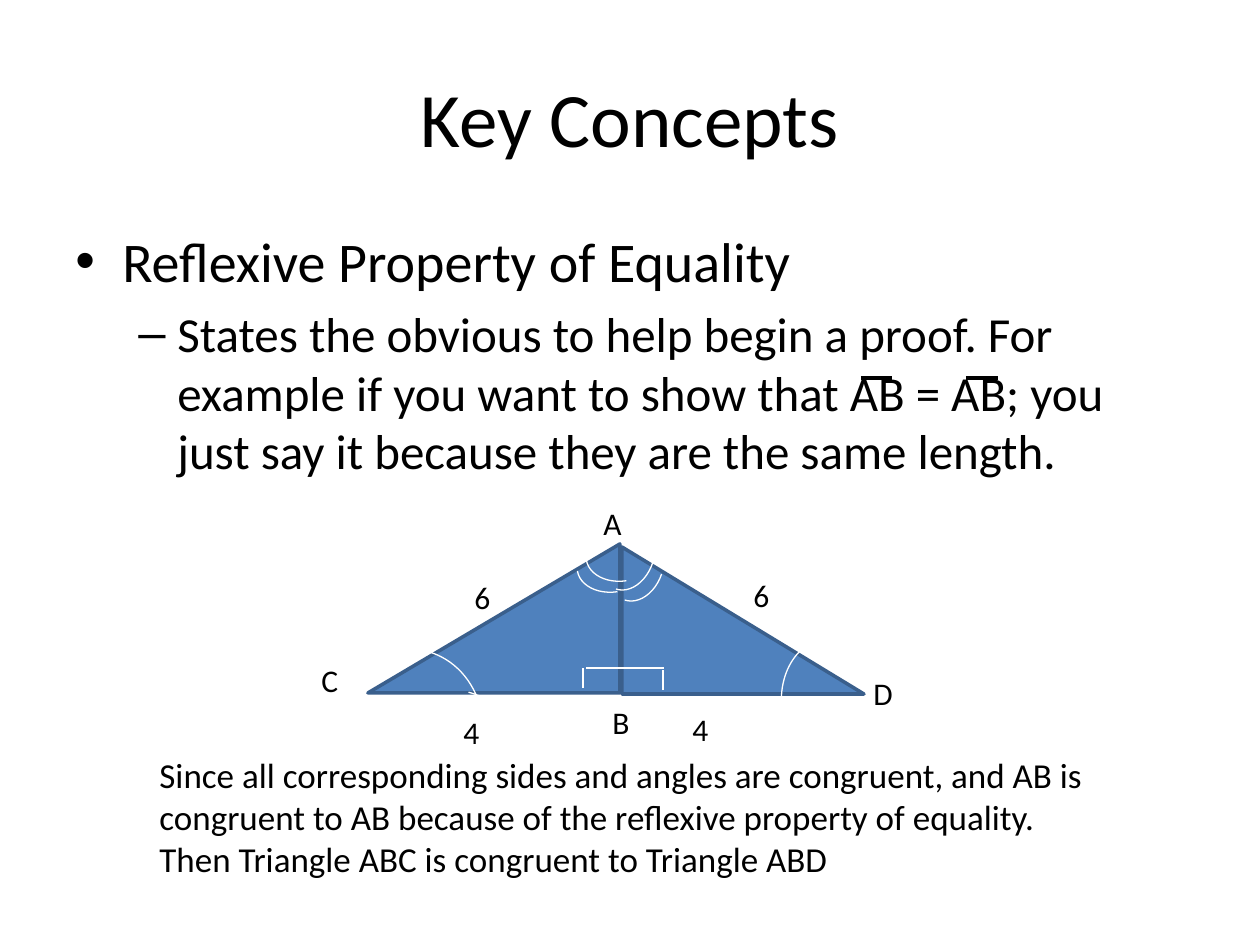
import pptx
import pptx.dml.color
import pptx.enum.shapes
import pptx.enum.text
import pptx.util
from lxml import etree
from pptx.oxml.ns import qn

SCALE = 914400 / 126  # EMU per px
BLACK, WHITE, BLUE, DARK_BLUE = "000000", "FFFFFF", "4F81BD", "3A5F8C"
SHAPES = pptx.enum.shapes.MSO_SHAPE

# Content: boxes are left, top, width, height in px
TITLE = ("Key Concepts", (63, 38, 1134, 157))
BODY_BOX = (63, 220, 1134, 624)
BODY = [  # text, size, bullet, left margin px, hanging px, space before pt
    ("Reflexive Property of Equality", 32, "•", 47, 47, 0),
    ("States the obvious to help begin a proof. For example if you want to show "
     "that AB = AB; you just say it because they are the same length.",
     28, "–", 102, 39, 5.6),
]
CONCLUSION = ("Since all corresponding sides and angles are congruent, and AB is "
              "congruent to AB because of the reflexive property of equality. "
              "Then Triangle ABC is congruent to Triangle ABD", (147, 747, 966, 140))
TRIANGLES = [  # box, mirrored
    ((622, 547, 242, 147), False),
    ((368, 544, 252, 149), True),
]
LABEL_SIZE = (63, 50)
LABELS = [  # text, left, top
    ("A", 591, 498), ("D", 861, 668), ("B", 600, 697), ("C", 309, 655),
    ("6", 462, 572), ("6", 741, 570), ("4", 451, 707), ("4", 680, 704),
]
BASE_ARC = (169.44, 202.92)
ARCS = [  # box, rotation, start and end adjustments
    ((336, 649, 147, 159), 0, BASE_ARC),
    ((378, 690, 147, 159), 0, BASE_ARC),
    ((767, 653, 129, 100), 264.8, None),
    ((586, 528, 73, 53), 171.5, None),
    ((577, 539, 73, 53), 171.5, None),
    ((591, 528, 73, 53), 108.4, None),
    ((600, 539, 73, 53), 109, None),
]
OVERBARS = [(861, 378, 892, 378), (966, 378, 998, 378)]
RIGHT_ANGLES = [(622, 668, 664, 668), (663, 690, 663, 670),
                (583, 688, 583, 668), (586, 668, 627, 668)]

deck = pptx.Presentation()


def px(length):
    return pptx.util.Emu(round(length * SCALE))


def color(value):
    return pptx.dml.color.RGBColor.from_string(value)


def add_run(para, text, size):
    span = para.add_run()
    span.text = text
    span.font.name = "Calibri"
    span.font.size = pptx.util.Pt(size)
    span.font.color.rgb = color(BLACK)


def add_text_frame(bounds):
    frame = slide.shapes.add_textbox(*map(px, bounds)).text_frame
    frame.word_wrap = True
    return frame


def add_text(text, bounds, size):
    frame = add_text_frame(bounds)
    add_run(frame.paragraphs[0], text, size)
    return frame


def set_line(item, value, width):
    item.line.color.rgb = color(value)
    item.line.width = pptx.util.Pt(width)


def add_outlined(kind, bounds, value, width):
    shape = slide.shapes.add_shape(kind, *map(px, bounds))
    shape.shadow.inherit = False
    set_line(shape, value, width)
    return shape


def add_lines(lines, value, width):
    for ends in lines:
        line = slide.shapes.add_connector(
            pptx.enum.shapes.MSO_CONNECTOR.STRAIGHT, *map(px, ends))
        set_line(line, value, width)
        etree.SubElement(line._element.spPr, qn("a:effectLst"))


def set_bullet(para, bullet, margin, hanging):
    props = para._p.get_or_add_pPr()
    props.set("marL", str(px(margin)))
    props.set("indent", str(-px(hanging)))
    etree.SubElement(props, qn("a:buFont")).set("typeface", "Arial")
    etree.SubElement(props, qn("a:buChar")).set("char", bullet)


deck.slide_width, deck.slide_height = px(1260), px(945)
slide = deck.slides.add_slide(deck.slide_layouts[6])

# Title
title = add_text(*TITLE, 44)
title.vertical_anchor = pptx.enum.text.MSO_ANCHOR.MIDDLE
title.paragraphs[0].alignment = pptx.enum.text.PP_ALIGN.CENTER

# Bulleted definition, with bars over the segment names
body = add_text_frame(BODY_BOX)
for index, (text, size, bullet, margin, hanging, space) in enumerate(BODY):
    para = body.add_paragraph() if index else body.paragraphs[0]
    para.level = index
    para.space_before = pptx.util.Pt(space)
    set_bullet(para, bullet, margin, hanging)
    add_run(para, text, size)
add_lines(OVERBARS, BLACK, 2)

# Triangles
for bounds, mirrored in TRIANGLES:
    triangle = add_outlined(SHAPES.RIGHT_TRIANGLE, bounds, DARK_BLUE, 2)
    triangle.fill.solid()
    triangle.fill.fore_color.rgb = color(BLUE)
    if mirrored:
        triangle._element.spPr.xfrm.set("flipH", "1")

# Vertex and side labels
for text, left, top in LABELS:
    add_text(text, (left, top, *LABEL_SIZE), 18)

# Angle marks
for bounds, rotation, limits in ARCS:
    arc = add_outlined(SHAPES.ARC, bounds, WHITE, 0.75)
    arc.fill.background()
    arc.rotation = rotation
    if limits:
        arc.adjustments[0], arc.adjustments[1] = limits
add_lines(RIGHT_ANGLES, WHITE, 0.75)

# Conclusion
add_text(*CONCLUSION, 20)

deck.save("out.pptx")
